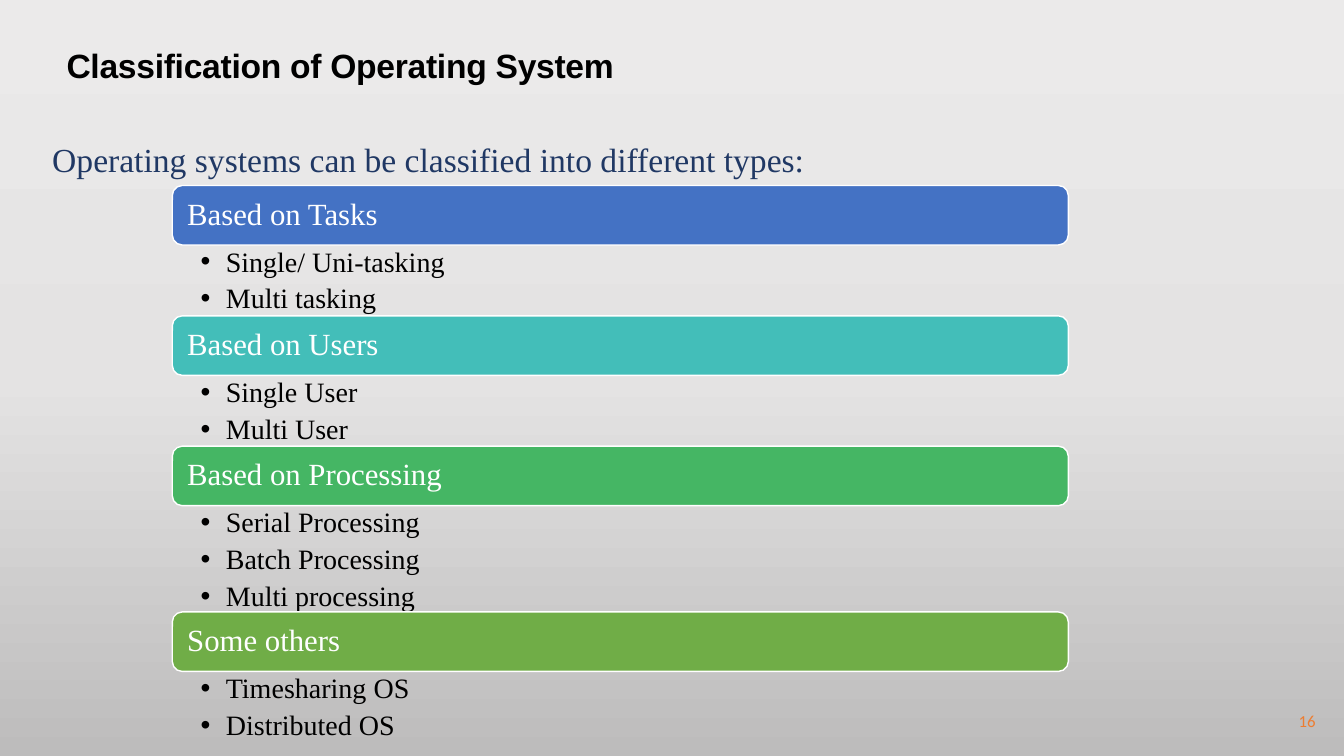
from copy import deepcopy

from pptx import Presentation
from pptx.dml.color import RGBColor
from pptx.enum.shapes import MSO_SHAPE
from pptx.enum.text import MSO_ANCHOR, MSO_AUTO_SIZE, PP_ALIGN
from pptx.oxml.ns import qn
from pptx.util import Pt

# Colours
WHITE = RGBColor(0xFF, 0xFF, 0xFF)
BLACK = RGBColor(0x00, 0x00, 0x00)
NAVY = RGBColor(0x20, 0x38, 0x64)
ORANGE = RGBColor(0xED, 0x7D, 0x31)
BLUE = RGBColor(0x44, 0x72, 0xC4)
TEAL = RGBColor(0x43, 0xBE, 0xB9)
GREEN = RGBColor(0x45, 0xB6, 0x64)
OLIVE = RGBColor(0x70, 0xAD, 0x47)
BACKGROUND_STOPS = [
    (0, RGBColor(0xEB, 0xEA, 0xEA)),
    (0.5, RGBColor(0xE4, 0xE3, 0xE3)),
    (1, RGBColor(0xBD, 0xBC, 0xBC)),
]

# Content
GROUPS = [
    ("Based on Tasks", BLUE, ["Single/ Uni-tasking", "Multi tasking"]),
    ("Based on Users", TEAL, ["Single User", "Multi User"]),
    ("Based on Processing", GREEN,
     ["Serial Processing", "Batch Processing", "Multi processing"]),
    ("Some others", OLIVE, ["Timesharing OS", "Distributed OS"]),
]

# Layout of the groups, in points
COMPARISON_LAYOUT = 4
GROUP_LEFT, GROUP_TOP, GROUP_WIDTH = 123.1, 132.5, 640
HEADER_HEIGHT, ITEM_HEIGHT = 42.5, 25.3


class SlideBuilder:
    """Holds the text style and the current slide."""

    font_name = "Times New Roman"

    def __init__(self, slide):
        self.slide = slide

    def background(self, stops):
        fill = self.slide.background.fill
        fill.gradient()
        fill.gradient_angle = 270
        stop_list = next(self.slide.element.iter(qn("a:gsLst")))
        stop_list.insert(1, deepcopy(stop_list[0]))
        for stop, (position, color) in zip(fill.gradient_stops, stops):
            stop.position = position
            stop.color.rgb = color

    def place(self, shape, left, top, width, height):
        box = {"left": left, "top": top, "width": width, "height": height}
        for name, value in box.items():
            setattr(shape, name, Pt(value))

    def fill_text(self, shape, lines, size, color, anchor=MSO_ANCHOR.TOP,
                  margins=(7.2, 3.6, 7.2, 3.6), alignment=PP_ALIGN.LEFT,
                  line_spacing=1.0, space_after=0, **font_format):
        frame = shape.text_frame
        frame.text = "\n".join(lines)
        sides = ("margin_left", "margin_top", "margin_right", "margin_bottom")
        frame_format = {
            "word_wrap": True,
            "auto_size": MSO_AUTO_SIZE.NONE,
            "vertical_anchor": anchor,
            **{side: Pt(margin) for side, margin in zip(sides, margins)},
        }
        paragraph_format = {
            "alignment": alignment,
            "line_spacing": line_spacing,
            "space_before": Pt(0),
            "space_after": Pt(space_after),
        }
        font_format = {"name": self.font_name, "size": Pt(size),
                       "bold": False, **font_format}
        for name, value in frame_format.items():
            setattr(frame, name, value)
        for paragraph in frame.paragraphs:
            for name, value in paragraph_format.items():
                setattr(paragraph, name, value)
            for run in paragraph.runs:
                for name, value in font_format.items():
                    setattr(run.font, name, value)
                run.font.color.rgb = color

    def title(self, text, box):
        shape = self.slide.shapes.title
        self.place(shape, *box)
        self.fill_text(shape, [text], 24, BLACK, margins=(7.9, 3.6, 7.2, 3.6),
                       name="Arial", bold=True)
        run = shape.text_frame.paragraphs[0].runs[0]
        run._r.get_or_add_rPr().set("spc", "-20")

    def text(self, text, box, size, color, **text_format):
        shape = self.slide.shapes.add_textbox(*map(Pt, box))
        self.fill_text(shape, [text], size, color, **text_format)

    def header(self, text, color, box):
        shape = self.slide.shapes.add_shape(
            MSO_SHAPE.ROUNDED_RECTANGLE, *map(Pt, box))
        shape.shadow.inherit = False
        shape.fill.solid()
        shape.fill.fore_color.rgb = color
        shape.line.color.rgb = WHITE
        shape.line.width = Pt(1)
        self.fill_text(shape, [text], 22, WHITE, anchor=MSO_ANCHOR.MIDDLE,
                       margins=(8.6, 6.5, 8.6, 6.5), line_spacing=0.9)

    def bullets(self, placeholder, items, box):
        self.place(placeholder, *box)
        self.fill_text(placeholder, items, 20, BLACK,
                       margins=(20.2, 2, 11.5, 2),
                       line_spacing=0.9, space_after=4.7)
        for paragraph in placeholder.text_frame.paragraphs:
            properties = paragraph._p.get_or_add_pPr()
            properties.set("marL", str(Pt(18)))
            properties.set("indent", str(Pt(-18)))
            for tag, name, value in (("a:buFont", "typeface", "Arial"),
                                     ("a:buChar", "char", "•")):
                bullet = properties.makeelement(qn(tag), {name: value})
                properties.append(bullet)


def main():
    presentation = Presentation()
    presentation.slide_width = Pt(960)
    presentation.slide_height = Pt(540)
    layout = presentation.slide_layouts[COMPARISON_LAYOUT]
    slide = presentation.slides.add_slide(layout)
    builder = SlideBuilder(slide)
    builder.background(BACKGROUND_STOPS)

    # Title, introduction and page number
    builder.title("Classification of Operating System", (39.6, 28.8, 807, 36))
    builder.text("Operating systems can be classified into different types:",
                 (30.2, 95.8, 929, 36), 24, NAVY)
    builder.text("16", (913, 500.4, 33.8, 28.8), 12, ORANGE, name="Calibri",
                 anchor=MSO_ANCHOR.MIDDLE, alignment=PP_ALIGN.RIGHT)

    # Stacked groups: a coloured header above its list
    list_placeholders = list(slide.placeholders)[1:]
    top = GROUP_TOP
    for placeholder, (name, color, items) in zip(list_placeholders, GROUPS):
        builder.header(name, color,
                       (GROUP_LEFT, top, GROUP_WIDTH, HEADER_HEIGHT))
        top += HEADER_HEIGHT
        list_height = ITEM_HEIGHT * len(items)
        builder.bullets(placeholder, items,
                        (GROUP_LEFT, top, GROUP_WIDTH, list_height))
        top += list_height

    presentation.save("out.pptx")


if __name__ == "__main__":
    main()
